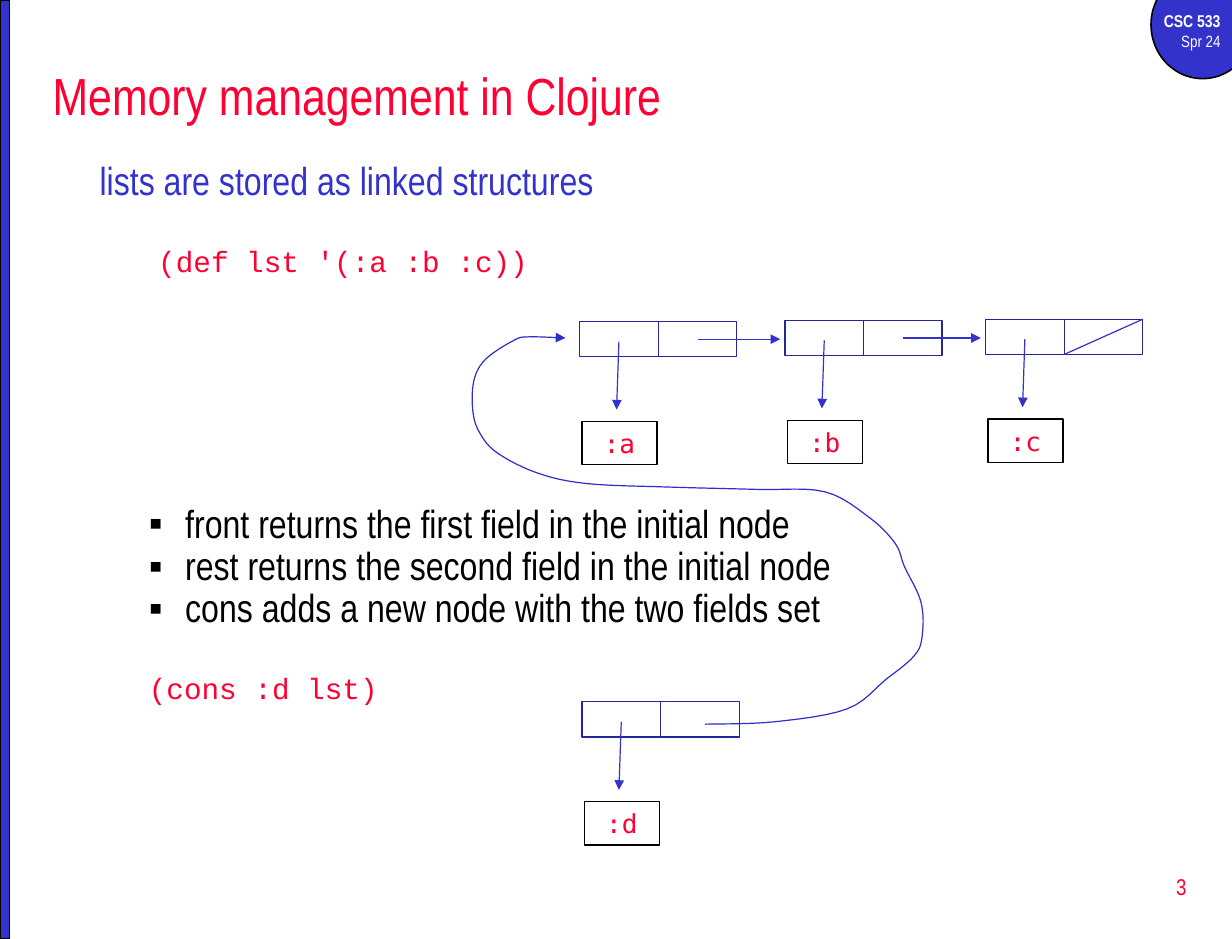
"""Build a slide that explains how Clojure lists are stored as linked nodes."""
from itertools import pairwise

from lxml.etree import SubElement
from pptx import Presentation
from pptx.dml.color import RGBColor
from pptx.enum.shapes import MSO_CONNECTOR, MSO_SHAPE
from pptx.enum.text import MSO_ANCHOR, PP_ALIGN
from pptx.oxml.ns import qn
from pptx.util import Inches, Pt

THEME = {
    "red": RGBColor.from_string("FF0033"),
    "blue": RGBColor.from_string("3333CC"),
    "cell": RGBColor.from_string("262699"),
    "curve": RGBColor.from_string("2E2ECB"),
    "black": RGBColor.from_string("000000"),
    "white": RGBColor.from_string("FFFFFF"),
    "course": {"name": "Arial Narrow", "size": Pt(10.5), "bold": True},
    "term": {"name": "Arial Narrow", "size": Pt(10)},
    "number": {"name": "Arial Narrow", "size": Pt(14)},
    "title": {"name": "Arial Narrow", "size": Pt(32)},
    "body": {"name": "Arial Narrow", "size": Pt(24)},
    "code": {"name": "Courier New", "size": Pt(18)},
    "label": {"name": "DejaVu Sans Mono", "size": Pt(16)},
}


def write(shape, lines, anchor=MSO_ANCHOR.TOP):
    """Fill a shape with (text, style, color, paragraph format, indent) lines."""
    frame = shape.text_frame
    frame.word_wrap = True
    frame.vertical_anchor = anchor
    for index, (text, style, color, layout, indent) in enumerate(lines):
        paragraph = frame.paragraphs[0] if index == 0 else frame.add_paragraph()
        for name, value in layout.items():
            setattr(paragraph, name, value)
        run = paragraph.add_run()
        run.text = text
        for name, value in THEME[style].items():
            setattr(run.font, name, value)
        run.font.color.rgb = THEME[color]
        properties = paragraph._p.get_or_add_pPr()
        properties.set("marL", str(Inches(indent)))
        if layout.get("level"):
            properties.set("indent", str(Inches(0.5 - indent)))
        if style == "body" and layout.get("level"):
            SubElement(properties, qn("a:buFont")).set("typeface", "Arial")
            SubElement(properties, qn("a:buChar")).set("char", "▪")


def outline(shape, color, width=0.75, arrow=False):
    """Draw a plain line around or along a shape, with an optional arrowhead."""
    shape.line.color.rgb = THEME[color]
    shape.line.width = Pt(width)
    if arrow:
        SubElement(shape.line._get_or_add_ln(), qn("a:tailEnd")).set("type", "triangle")
    SubElement(shape._element.spPr, qn("a:effectLst"))


presentation = Presentation()
presentation.slide_width = Inches(10.5)
presentation.slide_height = Inches(8)
slide = presentation.slides.add_slide(presentation.slide_layouts[6])
shapes = slide.shapes

decorations = [
    (MSO_SHAPE.OVAL, (9.81, -0.25, 0.88, 0.92)),
    (MSO_SHAPE.RECTANGLE, (0, 0, 0.08, 8)),
]
for kind, box in decorations:
    decoration = shapes.add_shape(kind, *map(Inches, box))
    decoration.fill.solid()
    decoration.fill.fore_color.rgb = THEME["blue"]
    outline(decoration, "black", 1)

right = {"alignment": PP_ALIGN.RIGHT}
center = {"alignment": PP_ALIGN.CENTER}
topic = {"line_spacing": 0.9, "space_before": Pt(5)}
code = {"line_spacing": 0.9, "space_before": Pt(26.5), "level": 1}
bullet = {"line_spacing": 0.9, "level": 1}
bullets = [
    "front returns the first field in the initial node",
    "rest returns the second field in the initial node",
    "cons adds a new node with the two fields set",
]
text_boxes = [
    ((9.67, 0.04, 0.83, 0.46), MSO_ANCHOR.TOP, [
        ("CSC 533", "course", "white", right, 0),
        ("Spr 24", "term", "white", right, 0),
    ]),
    ((8.02, 7.29, 2.19, 0.53), MSO_ANCHOR.MIDDLE, [("3", "number", "red", right, 0)]),
    ((0.35, 0.43, 9.92, 0.75), MSO_ANCHOR.MIDDLE, [
        ("Memory management in Clojure", "title", "red", {}, 0),
    ]),
    ((0.75, 1.33, 9.52, 2.58), MSO_ANCHOR.TOP, [
        ("lists are stored as linked structures", "body", "blue", topic, 0),
        ("(def lst '(:a :b :c))", "code", "red", code, 0.81),
    ]),
    ((0.67, 4.25, 9.52, 1.96), MSO_ANCHOR.TOP, [
        *[(text, "body", "black", bullet, 0.81) for text in bullets],
        ("(cons :d lst)", "code", "red", code, 0.5),
    ]),
]
for box, anchor, lines in text_boxes:
    write(shapes.add_textbox(*map(Inches, box)), lines, anchor)

cell_width, cell_height = 0.67, 0.3
label_width, label_height = 0.64, 0.37
list_nodes = [(":a", 4.94, 2.74), (":b", 6.69, 2.73), (":c", 8.4, 2.72)]
new_node = (":d", 4.96, 5.98)
links = []
for text, left, top in [*list_nodes, new_node]:
    boxes = [
        (left, top, cell_width, cell_height, "cell"),
        (left + cell_width, top, cell_width, cell_height, "cell"),
        (left + 0.02, top + 0.85, label_width, label_height, "black"),
    ]
    for *box, color in boxes:
        rectangle = shapes.add_shape(MSO_SHAPE.RECTANGLE, *map(Inches, box))
        rectangle.fill.background()
        outline(rectangle, color)
    write(rectangle, [(text, "label", "red", center, 0)], MSO_ANCHOR.MIDDLE)
    pointer = left + cell_width / 2
    links.append((pointer, top + 0.17, pointer - 0.02, top + 0.75, True))

for (_, left, top), (_, next_left, _) in pairwise(list_nodes):
    middle = top + cell_height / 2
    links.append((left + 1.5 * cell_width, middle, next_left - 0.04, middle, True))

_, last_left, last_top = list_nodes[-1]
slash_left, slash_right = last_left + cell_width, last_left + 2 * cell_width
links.append((slash_right, last_top, slash_left, last_top + cell_height, False))

for *ends, arrow in links:
    link = shapes.add_connector(MSO_CONNECTOR.STRAIGHT, *map(Inches, ends))
    outline(link, "blue", arrow=arrow)

leave_new_node = [(6.01, 6.17), (6.6, 6.15), (7.22, 6.04)]
right_bend = [(7.55, 5.79), (7.79, 5.59), (7.86, 5.42), (7.85, 5.13),
              (7.71, 4.83), (7.63, 4.63), (7.41, 4.41), (7.03, 4.19)]
run_left = [(6.46, 4.17), (5.7, 4.15), (5.0, 4.12), (4.58, 4.03)]
left_bend = [(4.24, 3.86), (4.09, 3.69), (4.03, 3.5), (4.04, 3.24), (4.14, 3.06)]
reach_list = [(4.38, 2.9), (4.51, 2.87), (4.82, 2.88)]
anchors = leave_new_node + right_bend + run_left + left_bend + reach_list

steps_per_span = 6
padded = [anchors[0], *anchors, anchors[-1]]
curve_points = []
for span in zip(padded, padded[1:], padded[2:], padded[3:]):
    for step in range(1, steps_per_span + 1):
        t = step / steps_per_span
        weights = (
            (-t + 2 * t**2 - t**3) / 2,
            (2 - 5 * t**2 + 3 * t**3) / 2,
            (t + 4 * t**2 - 3 * t**3) / 2,
            (t**3 - t**2) / 2,
        )
        curve_points.append(tuple(
            Inches(sum(weight * value for weight, value in zip(weights, values)))
            for values in zip(*span)))

builder = shapes.build_freeform(*map(Inches, anchors[0]))
builder.add_line_segments(curve_points, close=False)
curve = builder.convert_to_shape()
curve.fill.background()
outline(curve, "curve", arrow=True)

presentation.save("out.pptx")
